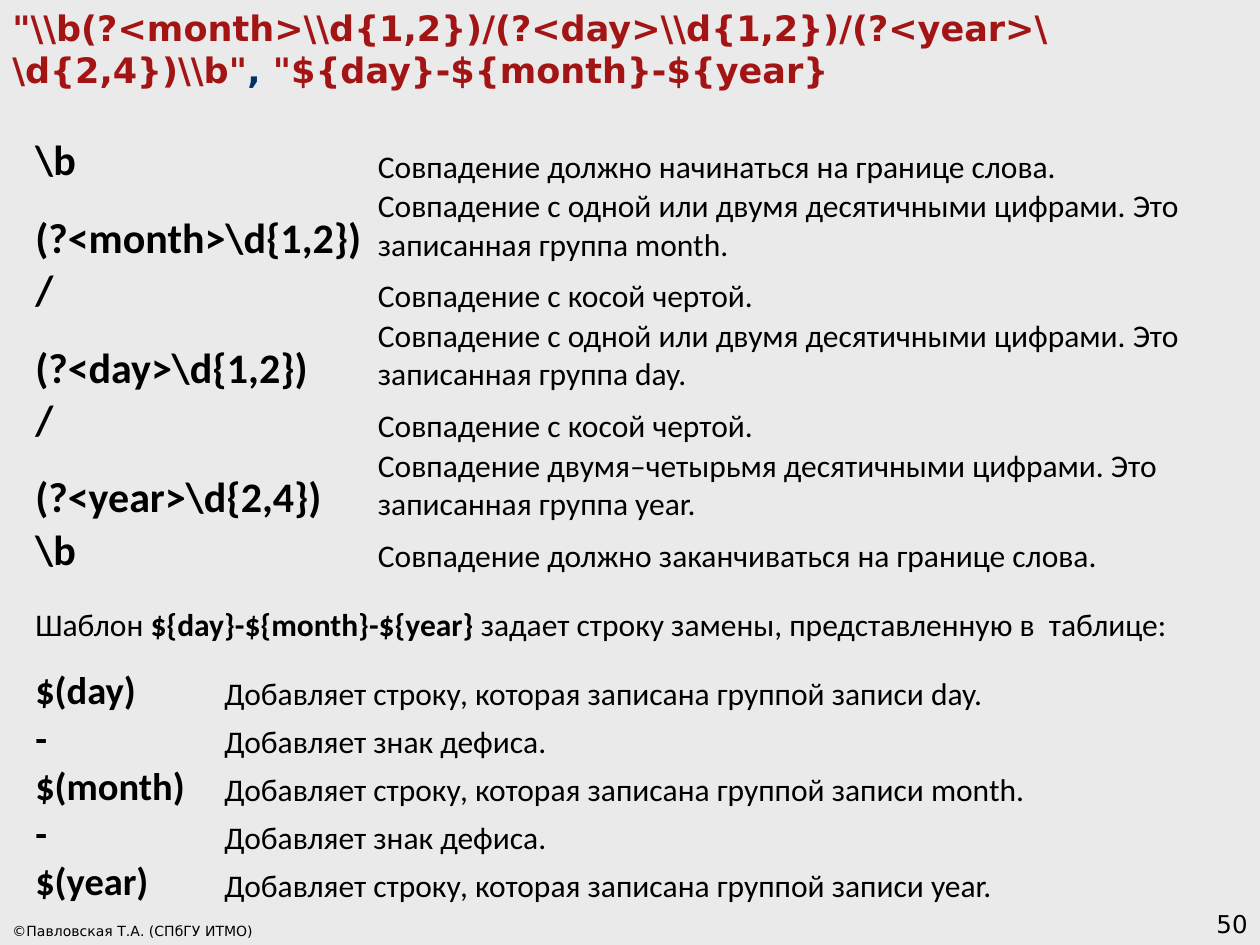
from dataclasses import dataclass

from lxml.etree import SubElement
from pptx import Presentation
from pptx.dml.color import RGBColor
from pptx.enum.text import MSO_ANCHOR, PP_ALIGN
from pptx.oxml.ns import qn
from pptx.util import Inches, Pt


@dataclass(frozen=True)
class Theme:
    background: str = "EAEAEA"
    code: str = "A31515"
    comma: str = "003366"
    text: str = "000000"
    heading_font: str = "DejaVu Sans"
    body_font: str = "Calibri"
    title_size: int = 20
    pattern_size: int = 24
    replacement_size: int = 22
    body_size: int = 18
    footer_size: int = 8
    number_size: int = 14


THEME = Theme()

TITLE = [
    (r'"\\b(?<month>\\d{1,2})/(?<day>\\d{1,2})/(?<year>\\d{2,4})\\b"', THEME.code),
    (", ", THEME.comma),
    ('"${day}-${month}-${year}', THEME.code),
]
PATTERNS = [
    (r"\b", "Совпадение должно начинаться на границе слова."),
    (r"(?<month>\d{1,2})", "Совпадение с одной или двумя десятичными цифрами. Это записанная группа month."),
    ("/", "Совпадение с косой чертой."),
    (r"(?<day>\d{1,2})", "Совпадение с одной или двумя десятичными цифрами. Это записанная группа day."),
    ("/", "Совпадение с косой чертой."),
    (r"(?<year>\d{2,4})", "Совпадение двумя–четырьмя десятичными цифрами. Это записанная группа year."),
    (r"\b", "Совпадение должно заканчиваться на границе слова."),
]
TEMPLATE_NOTE = [
    ("Шаблон ", False),
    ("${day}-${month}-${year} ", True),
    ("задает строку замены, представленную в  таблице:", False),
]
REPLACEMENTS = [
    ("$(day)", "Добавляет строку, которая записана группой записи day."),
    ("-", "Добавляет знак дефиса."),
    ("$(month)", "Добавляет строку, которая записана группой записи month."),
    ("-", "Добавляет знак дефиса."),
    ("$(year)", "Добавляет строку, которая записана группой записи year."),
]
COPYRIGHT = "©Павловская Т.А. (СПбГУ ИТМО)"
PAGE_NUMBER = "50"

COLUMN_WIDTHS = [1.5, 1.22, 7]
PATTERN_HEIGHTS = [0.41, 0.62] * 3 + [0.41]
NOTE_HEIGHTS = [0.55, 0.55]
REPLACEMENT_HEIGHTS = [0.38] * 4
ROW_HEIGHTS = PATTERN_HEIGHTS + NOTE_HEIGHTS + REPLACEMENT_HEIGHTS


def add_run(paragraph, text, size, font, color=THEME.text, bold=False):
    run = paragraph.add_run()
    run.text = text
    run.font.size = Pt(size)
    run.font.name = font
    run.font.bold = bold
    run.font.color.rgb = RGBColor.from_string(color)


def add_box(slide, left, top, width, height, align=PP_ALIGN.LEFT):
    frame = slide.shapes.add_textbox(*map(Inches, (left, top, width, height))).text_frame
    frame.word_wrap = True
    frame.vertical_anchor = MSO_ANCHOR.BOTTOM
    frame.paragraphs[0].alignment = align
    return frame.paragraphs[0]


def clear_cell(cell):
    properties = cell._tc.get_or_add_tcPr()
    for side in ("lnL", "lnR", "lnT", "lnB"):
        SubElement(SubElement(properties, qn(f"a:{side}"), w="0"), qn("a:noFill"))
    cell.fill.background()
    cell.margin_left = cell.margin_right = cell.margin_top = Inches(0.01)
    cell.margin_bottom = 0
    cell.vertical_anchor = MSO_ANCHOR.BOTTOM


def write_cell(cell, parts, size):
    for text, bold in parts:
        add_run(cell.text_frame.paragraphs[0], text, size, THEME.body_font, bold=bold)


def fill_pair(table, row, pair, split, term_size):
    term, meaning = pair
    if split == 2:
        table.cell(row, 0).merge(table.cell(row, 1))
    else:
        table.cell(row, 1).merge(table.cell(row, 2))
    write_cell(table.cell(row, 0), [(term, True)], term_size)
    write_cell(table.cell(row, split), [(meaning, False)], THEME.body_size)


def add_regex_table(slide):
    table = slide.shapes.add_table(
        len(ROW_HEIGHTS), len(COLUMN_WIDTHS), Inches(0.27), Inches(1.07),
        Inches(sum(COLUMN_WIDTHS)), Inches(sum(ROW_HEIGHTS)),
    ).table
    table.first_row = table.horz_banding = False
    for column, width in zip(table.columns, COLUMN_WIDTHS):
        column.width = Inches(width)
    for row, height in zip(table.rows, ROW_HEIGHTS):
        row.height = Inches(height)
    for cell in table.iter_cells():
        clear_cell(cell)

    note_row = len(PATTERNS)
    for row, pair in enumerate(PATTERNS):
        fill_pair(table, row, pair, 2, THEME.pattern_size)
    table.cell(note_row, 0).merge(table.cell(note_row, 2))
    write_cell(table.cell(note_row, 0), TEMPLATE_NOTE, THEME.body_size)
    for row, pair in enumerate(REPLACEMENTS, note_row + 1):
        fill_pair(table, row, pair, 1, THEME.replacement_size)


def main():
    deck = Presentation()
    deck.slide_width, deck.slide_height = Inches(10), Inches(7.5)
    slide = deck.slides.add_slide(deck.slide_layouts[6])
    slide.background.fill.solid()
    slide.background.fill.fore_color.rgb = RGBColor.from_string(THEME.background)

    title = add_box(slide, 0, 0, 9.37, 0.77)
    for text, color in TITLE:
        add_run(title, text, THEME.title_size, THEME.heading_font, color, True)
    add_regex_table(slide)
    footer = add_box(slide, 0, 7.22, 3.11, 0.28)
    add_run(footer, COPYRIGHT, THEME.footer_size, THEME.heading_font)
    number = add_box(slide, 7.92, 7, 2.08, 0.5, PP_ALIGN.RIGHT)
    add_run(number, PAGE_NUMBER, THEME.number_size, THEME.heading_font)
    deck.save("out.pptx")


if __name__ == "__main__":
    main()
